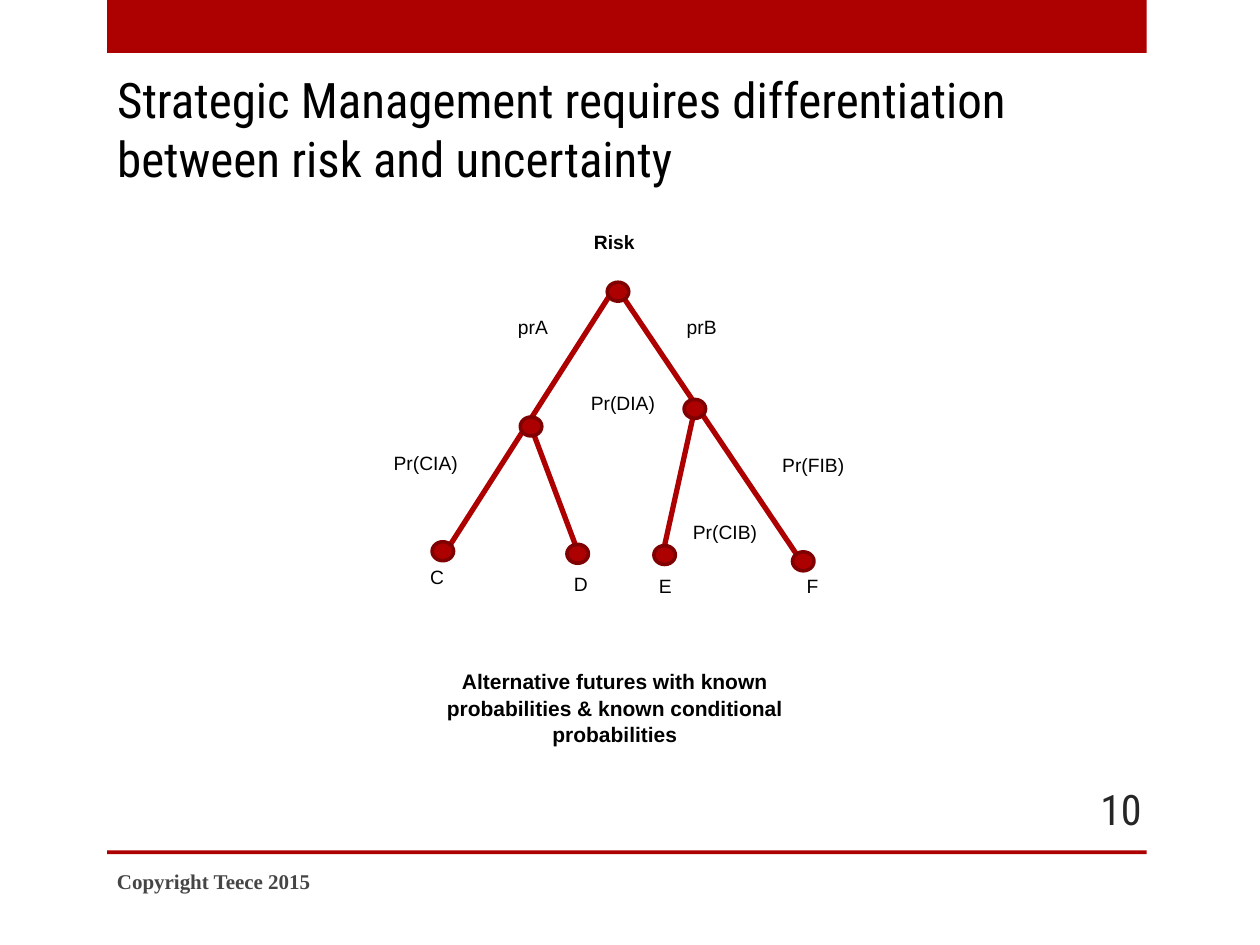
import pptx
import pptx.util
import pptx.dml.color
import pptx.enum.shapes
import pptx.enum.text
import pptx.oxml.ns
import lxml.etree

RGBColor = pptx.dml.color.RGBColor
RED = RGBColor(0xAD, 0x01, 0x01)
DARK_RED = RGBColor(0x80, 0x01, 0x01)
BLACK = RGBColor(0, 0, 0)
GREY = RGBColor(0x45, 0x45, 0x45)
CHARCOAL = RGBColor(0x26, 0x26, 0x26)

ALIGN = pptx.enum.text.PP_ALIGN
ANCHOR = pptx.enum.text.MSO_ANCHOR
SHAPE = pptx.enum.shapes.MSO_SHAPE

# The slide is a grid of 100 columns by 75 rows, each 0.1 inch
COLUMNS, ROWS = 100, 75
NODE_WIDTH, NODE_HEIGHT = 1.7, 1.5
LABEL_HEIGHT = 2.7

# Centre of each node: column, row
NODES = [
    (49.05, 23.15),                                      # root
    (42.15, 33.85), (55.15, 32.45),                      # A, B
    (35.15, 43.75), (45.85, 43.95), (52.75, 44.05), (63.75, 44.55),  # C to F
]

# Branches: start column, start row, end column, end row
BRANCHES = [
    (35.5, 43.6, 48.8, 22.8),
    (63.9, 45, 48.8, 22.6),
    (46.1, 44.4, 42, 33.5),
    (52.5, 44.4, 55.2, 32.2),
]

# Labels: text, centre column, top row, width
LABELS = [
    ("prA", 42.3, 24.5, 4.4), ("prB", 55.7, 24.5, 4.4),
    ("Pr(CIA)", 33.8, 35.3, 8.6), ("Pr(DIA)", 49.45, 30.6, 7.3),
    ("Pr(CIB)", 57.55, 40.8, 7.3), ("Pr(FIB)", 64.55, 35.5, 7.3),
    ("C", 34.7, 44.4, 4.4), ("D", 46.1, 44.9, 4.4),
    ("E", 52.8, 45.1, 4.4), ("F", 64.5, 45.1, 4.4),
]


def grid(*units):
    return [pptx.util.Inches(unit / 10) for unit in units]


def write(box, text, size, font, color=BLACK, bold=False,
          align=ALIGN.LEFT, anchor=ANCHOR.TOP):
    frame = box.text_frame
    frame.word_wrap = True
    frame.vertical_anchor = anchor
    para = frame.paragraphs[0]
    para.text = text
    para.alignment = align
    para.font.size = pptx.util.Pt(size)
    para.font.name = font
    para.font.bold = bold
    para.font.color.rgb = color
    return para


def add_text(page, place, text, size, font, **style):
    return write(page.shapes.add_textbox(*grid(*place)), text, size, font, **style)


def add_red_shape(page, kind, place):
    shape = page.shapes.add_shape(kind, *grid(*place))
    shape.shadow.inherit = False
    shape.fill.solid()
    shape.fill.fore_color.rgb = RED
    shape.line.fill.background()
    return shape


def add_node(page, column, row):
    place = (column - NODE_WIDTH / 2, row - NODE_HEIGHT / 2, NODE_WIDTH, NODE_HEIGHT)
    node = add_red_shape(page, SHAPE.OVAL, place)
    node.line.color.rgb = DARK_RED
    node.line.width = pptx.util.Pt(2.08)


def add_branch(page, ends):
    straight = pptx.enum.shapes.MSO_CONNECTOR.STRAIGHT
    branch = page.shapes.add_connector(straight, *grid(*ends))
    branch.line.color.rgb = RED
    branch.line.width = pptx.util.Pt(3)
    properties = branch._element.spPr
    lxml.etree.SubElement(properties, pptx.oxml.ns.qn("a:effectLst"))


def main():
    deck = pptx.Presentation()
    deck.slide_width, deck.slide_height = grid(COLUMNS, ROWS)
    page = deck.slides.add_slide(deck.slide_layouts[5])

    # Title
    title = page.shapes.title
    title.left, title.top, title.width, title.height = grid(8.3, 5, 84.2, 10.4)
    write(title, "Strategic Management requires differentiation "
          "between risk and uncertainty", 28, "Roboto Condensed")

    # Header band and footer
    add_red_shape(page, SHAPE.RECTANGLE, (8.5, 0, 82.5, 4.2))
    add_red_shape(page, SHAPE.RECTANGLE, (8.5, 67.5, 82.5, 0.3))
    add_text(page, (8.3, 67.9, 53.3, 4), "Copyright Teece 2015", 12,
             "Times New Roman", color=GREY, bold=True, anchor=ANCHOR.MIDDLE)
    add_text(page, (83.3, 62.2, 8.3, 4), "10", 24, "Roboto Condensed",
             color=CHARCOAL, align=ALIGN.RIGHT, anchor=ANCHOR.MIDDLE)

    # Probability tree
    add_text(page, (39.5, 17.8, 18.5, 3.7), "Risk", 11, "Arial",
             bold=True, align=ALIGN.CENTER)
    for text, center, top, width in LABELS:
        add_text(page, (center - width / 2, top, width, LABEL_HEIGHT), text,
                 11, "Arial", align=ALIGN.CENTER)
    for ends in BRANCHES:
        add_branch(page, ends)
    for column, row in NODES:
        add_node(page, column, row)

    # Caption
    caption = add_text(page, (31.3, 52.5, 35, 12.7),
                       "Alternative futures with known probabilities "
                       "& known conditional probabilities",
                       12, "Arial", bold=True, align=ALIGN.CENTER)
    caption.line_spacing = 1.05

    deck.save("out.pptx")


if __name__ == "__main__":
    main()
